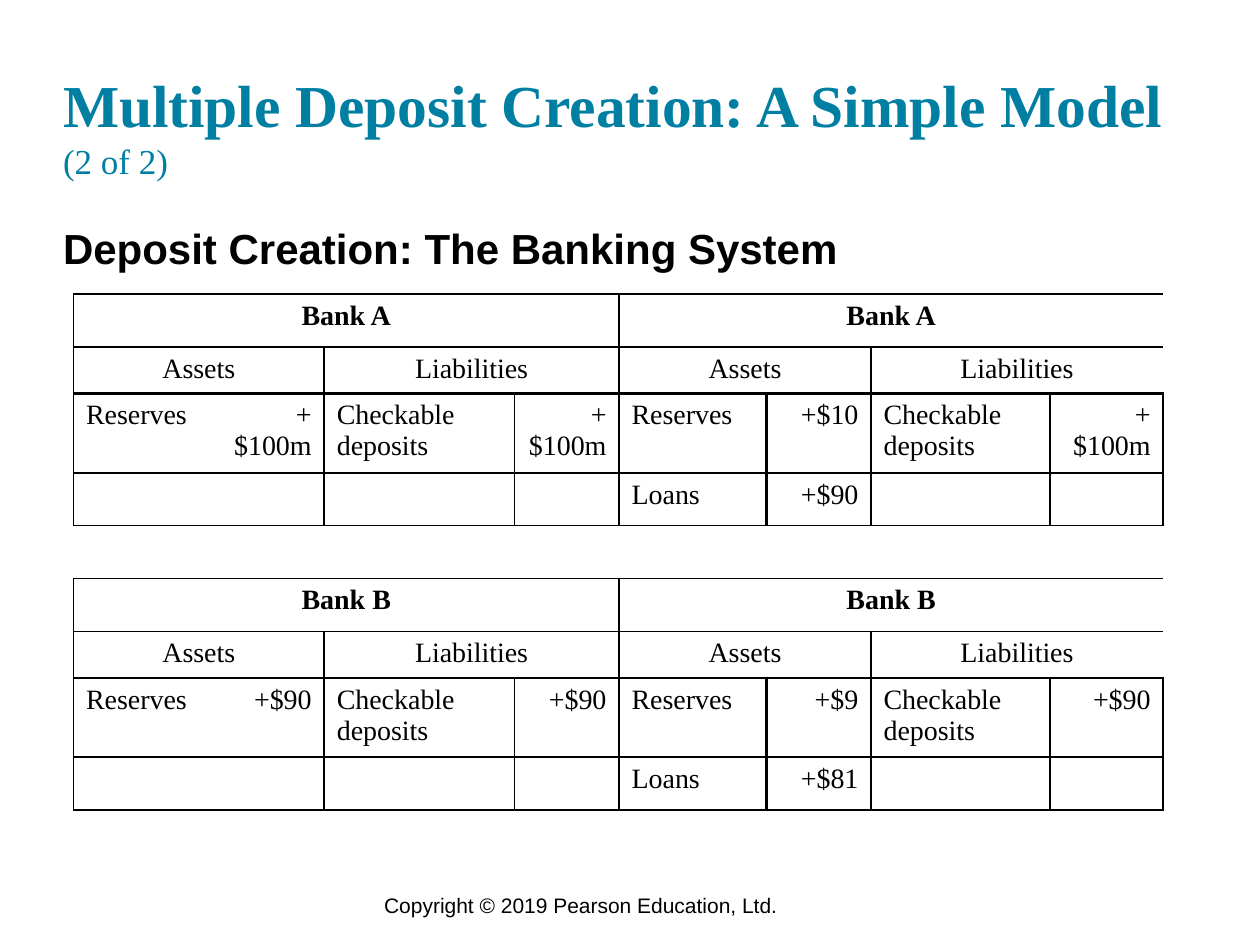
from lxml import etree
from pptx import Presentation
from pptx.dml.color import RGBColor
from pptx.enum.text import MSO_ANCHOR, MSO_AUTO_SIZE, PP_ALIGN
from pptx.oxml.ns import qn
from pptx.util import Pt

LEFT, CENTER, RIGHT = PP_ALIGN.LEFT, PP_ALIGN.CENTER, PP_ALIGN.RIGHT
TOP, BOTTOM = MSO_ANCHOR.TOP, MSO_ANCHOR.BOTTOM
NO_AUTOFIT = MSO_AUTO_SIZE.NONE
TEAL = RGBColor(0x00, 0x7F, 0xA3)
BLACK = RGBColor(0, 0, 0)
SERIF, SANS = "Times New Roman", "Arial"
NO_STYLE_NO_GRID = "{2D5ABB26-0587-4C30-8999-92F81FD0307C}"

TITLE = [("Multiple Deposit Creation: A Simple Model ", 34, True), ("(2 of 2)", 20, False)]
SUBTITLE = "Deposit Creation: The Banking System"
COPYRIGHT = "Copyright © 2019 Pearson Education, Ltd."

# Each bank: name, then two rows of label and amount pairs
BANKS = [
    ("Bank A", [
        ["Reserves", "+$100m", "Checkable deposits", "+$100m",
         "Reserves", "+$10", "Checkable deposits", "+$100m"],
        ["", "", "", "", "Loans", "+$90", "", ""],
    ]),
    ("Bank B", [
        ["Reserves", "+$90", "Checkable deposits", "+$90",
         "Reserves", "+$9", "Checkable deposits", "+$90"],
        ["", "", "", "", "Loans", "+$81", "", ""],
    ]),
]
SIDES = ["Assets", "Liabilities"] * 2

COL_WIDTHS = [83.5, 59.8, 108.7, 59.8, 84.2, 59.8, 102.2, 64.8]
BANK_HEIGHTS = [30.2, 26.6, 45.4, 30.2]
GAP_HEIGHT = 30.2
THIN, THICK = 1, 1.5
MIDDLE = len(COL_WIDTHS) // 2


def style(r, font, size, color, bold=False):
    r.font.name, r.font.size, r.font.bold = font, Pt(size), bold
    r.font.color.rgb = color


def place(sp, x, y, w, h, anchor):
    sp.left, sp.top, sp.width, sp.height = Pt(x), Pt(y), Pt(w), Pt(h)
    tf = sp.text_frame
    tf.word_wrap, tf.auto_size, tf.vertical_anchor = True, NO_AUTOFIT, anchor
    tf.margin_left = tf.margin_right = tf.margin_top = tf.margin_bottom = 0
    p = tf.paragraphs[0]
    p.alignment, p.space_before = LEFT, Pt(0)
    return p


def set_borders(cell, **widths):
    """Draw black lines on the sides given as L, R, T and B, in points."""
    tc_pr = cell._tc.get_or_add_tcPr()
    for i, (side, width) in enumerate(widths.items()):
        ln = etree.Element(qn(f"a:ln{side}"), w=str(Pt(width)))
        fill = etree.SubElement(ln, qn("a:solidFill"))
        etree.SubElement(fill, qn("a:srgbClr"), val=str(BLACK))
        tc_pr.insert(i, ln)


def fill_row(table, row, texts, span, alignments, top, bottom, bold=False):
    """Fill one row with texts, merging each group of span columns.

    Vertical lines stand around each group, or each label and amount pair.
    """
    group = max(span, 2)
    for col in range(len(COL_WIDTHS)):
        widths = {}
        if col % group == 0:
            widths["L"] = THICK if col == MIDDLE else THIN
        if (col + 1) % group == 0:
            widths["R"] = THICK if col + 1 == MIDDLE else THIN
        set_borders(table.cell(row, col), **widths, T=top, B=bottom)
    for i, text in enumerate(texts):
        cell = table.cell(row, i * span)
        if span > 1:
            cell.merge(table.cell(row, (i + 1) * span - 1))
        if text:
            cell.text = text
            p = cell.text_frame.paragraphs[0]
            p.alignment = alignments[i % len(alignments)]
            style(p.runs[0], SERIF, 16, BLACK, bold)


def add_bank_table(slide):
    heights = BANK_HEIGHTS + [GAP_HEIGHT] + BANK_HEIGHTS
    frame = slide.shapes.add_table(len(heights), len(COL_WIDTHS), Pt(42), Pt(168),
                                   Pt(sum(COL_WIDTHS)), Pt(sum(heights)))
    table = frame.table
    table.first_row = table.horz_banding = False
    table._tbl.tblPr.find(qn("a:tableStyleId")).text = NO_STYLE_NO_GRID
    for column, width in zip(table.columns, COL_WIDTHS):
        column.width = Pt(width)
    for row, height in zip(table.rows, heights):
        row.height = Pt(height)
    for cell in table.iter_cells():
        cell.fill.background()
    for i, (name, (first, second)) in enumerate(BANKS):
        row = i * (len(BANK_HEIGHTS) + 1)
        fill_row(table, row, [name] * 2, 4, [CENTER], THIN, THIN, bold=True)
        fill_row(table, row + 1, SIDES, 2, [CENTER], THIN, THICK)
        fill_row(table, row + 2, first, 1, [LEFT, RIGHT], THICK, THIN)
        fill_row(table, row + 3, second, 1, [LEFT, RIGHT], THIN, THIN)


def main():
    prs = Presentation()
    prs.slide_width, prs.slide_height = Pt(720), Pt(540)
    slide = prs.slides.add_slide(prs.slide_layouts[1])
    title, body = slide.placeholders

    p = place(title, 36, 17.3, 648, 86.4, BOTTOM)
    for text, size, bold in TITLE:
        r = p.add_run()
        r.text = text
        style(r, SERIF, size, TEAL, bold)

    p = place(body, 36, 127, 648, 33, TOP)
    p.text = SUBTITLE
    p_pr = p._p.get_or_add_pPr()
    p_pr.set("marL", "0")
    p_pr.set("indent", "0")
    etree.SubElement(p_pr, qn("a:buNone"))
    style(p.runs[0], SANS, 24, BLACK, True)

    add_bank_table(slide)

    box = slide.shapes.add_textbox(Pt(212.4), Pt(506.2), Pt(486), Pt(21.6))
    tf = box.text_frame
    tf.word_wrap = True
    tf.text = COPYRIGHT
    style(tf.paragraphs[0].runs[0], SANS, 12, BLACK)

    prs.save("out.pptx")


if __name__ == "__main__":
    main()
